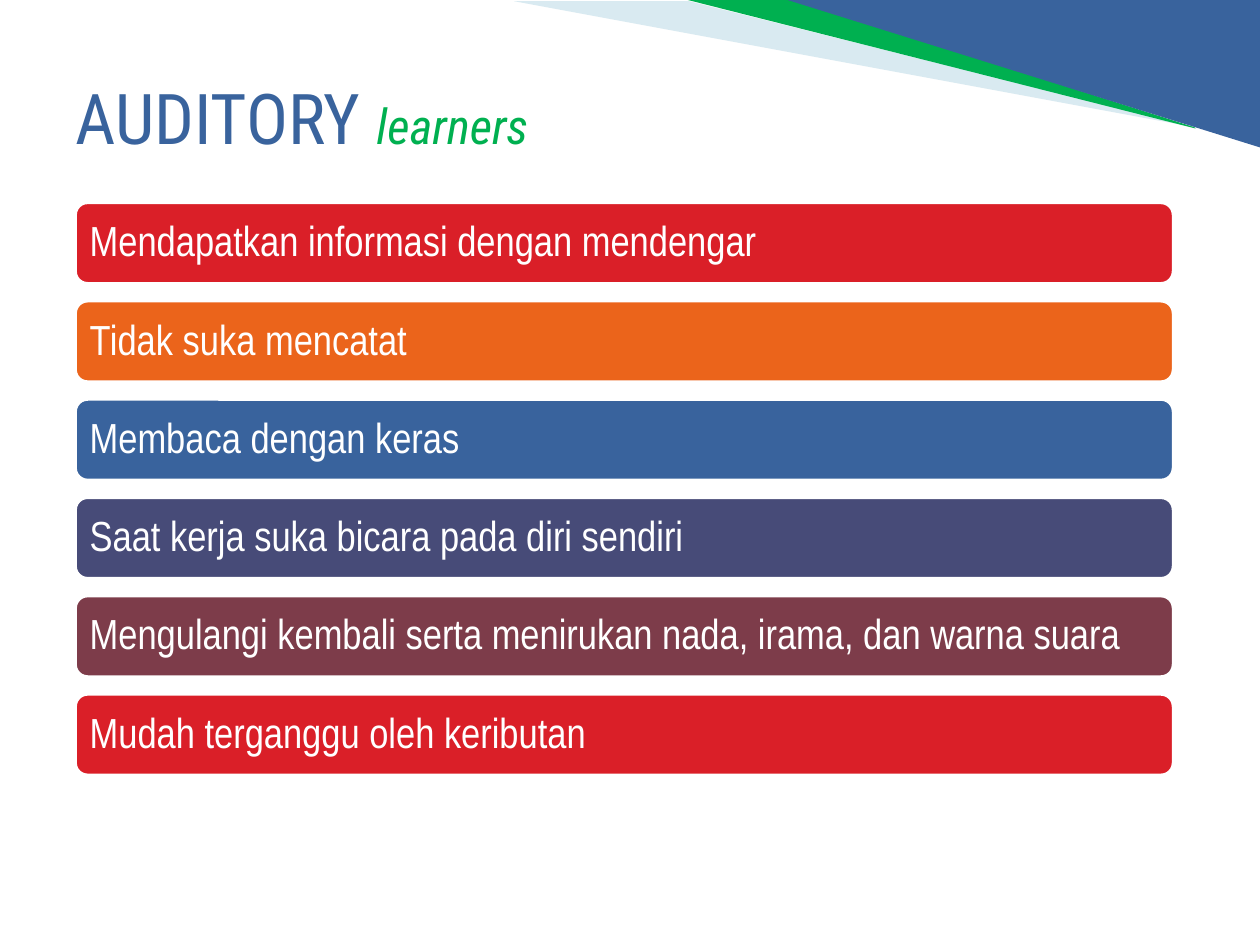
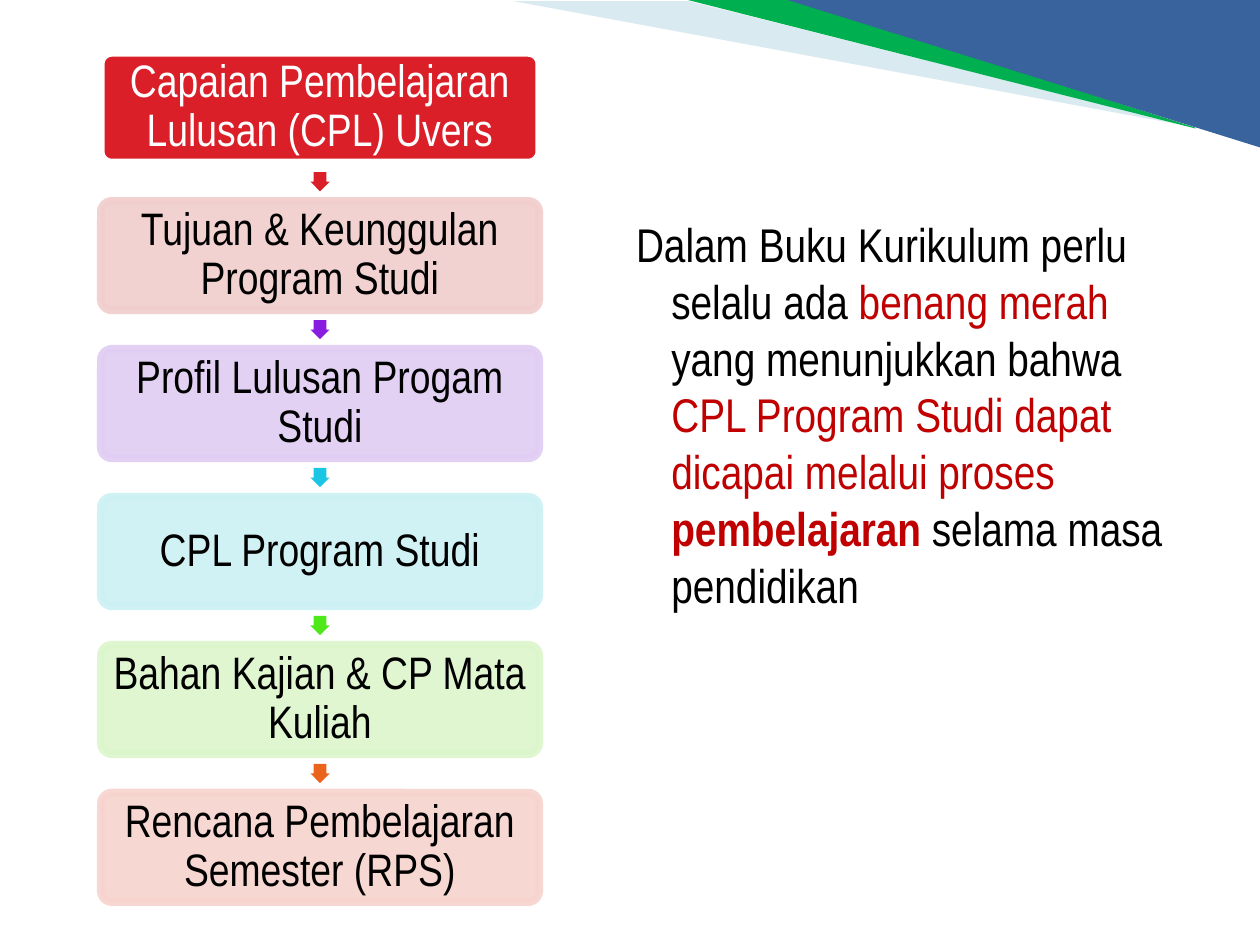
from collections import namedtuple

from lxml.etree import SubElement
from pptx import Presentation
from pptx.dml.color import RGBColor
from pptx.enum.shapes import MSO_SHAPE as Shape
from pptx.enum.text import MSO_ANCHOR as Anchor, PP_ALIGN as Align
from pptx.oxml.ns import qn
from pptx.util import Inches, Pt

SLIDE_W, SLIDE_H = Inches(10), Inches(7.5)
COLUMNS, ROWS = 100, 75

WHITE = RGBColor(0xFF, 0xFF, 0xFF)
BLACK = RGBColor(0, 0, 0)
RED = RGBColor(0xDA, 0x1F, 0x28)
ORANGE = RGBColor(0xEB, 0x64, 0x1B)
BLUE = RGBColor(0x39, 0x63, 0x9D)
INDIGO = RGBColor(0x47, 0x4B, 0x78)
MAROON = RGBColor(0x7D, 0x3C, 0x4A)
GREEN = RGBColor(0x00, 0xB0, 0x50)
MIST = RGBColor(0xA0, 0xCB, 0xDC)
CRIMSON = RGBColor(0xC0, 0, 0)
VIOLET = RGBColor(0x88, 0x1D, 0xE0)
CYAN = RGBColor(0x1B, 0xC6, 0xE5)
LIME = RGBColor(0x4E, 0xE8, 0x1B)
PALE_RED = RGBColor(0xF1, 0xCD, 0xCD)
PALE_VIOLET = RGBColor(0xE1, 0xCD, 0xF3)
PALE_CYAN = RGBColor(0xCC, 0xF1, 0xF4)
PALE_LIME = RGBColor(0xDC, 0xF6, 0xCC)
PALE_ORANGE = RGBColor(0xF7, 0xD3, 0xCD)

TITLE_FONT = "Roboto Condensed"
BODY_FONT = "Arial Narrow"
OUTLINE = Pt(4.33)

Box = namedtuple("Box", "left top width height")


def cols(count):
    return round(SLIDE_W * count / COLUMNS)


def rows(count):
    return round(SLIDE_H * count / ROWS)


def grid(left, top, width, height):
    return Box(cols(left), rows(top), cols(width), rows(height))


def stack(box, count, gap_ratio):
    height = box.height / (count + (count - 1) * gap_ratio)
    pitch = height * (1 + gap_ratio)
    return [Box(box.left, round(box.top + i * pitch), box.width, round(height))
            for i in range(count)]


def paint(shape, fill, line=None, opacity=100):
    shape.shadow.inherit = False
    shape.fill.solid()
    shape.fill.fore_color.rgb = fill
    if line is None:
        shape.line.fill.background()
    else:
        shape.line.color.rgb = line
        shape.line.width = OUTLINE
    if opacity < 100:
        for color in shape._element.spPr.iter(qn("a:srgbClr")):
            SubElement(color, qn("a:alpha")).set("val", str(opacity * 1000))


def add_run(paragraph, text, size, color, font=BODY_FONT, bold=False, italic=False):
    run = paragraph.add_run()
    run.text = text
    run.font.name = font
    run.font.size = Pt(size)
    run.font.color.rgb = color
    run.font.bold = bold
    run.font.italic = italic


def add_text_box(slide, box, anchor):
    frame = slide.shapes.add_textbox(*box).text_frame
    frame.word_wrap = True
    frame.vertical_anchor = anchor
    return frame.paragraphs[0]


def add_card(slide, box, text, size, fill, line, ink, align, margin,
             corner=0.17, opacity=100):
    card = slide.shapes.add_shape(Shape.ROUNDED_RECTANGLE, *box)
    card.adjustments[0] = corner
    paint(card, fill, line, opacity)
    frame = card.text_frame
    frame.word_wrap = True
    frame.vertical_anchor = Anchor.MIDDLE
    frame.margin_left = frame.margin_right = margin
    frame.margin_top = frame.margin_bottom = margin
    paragraph = frame.paragraphs[0]
    paragraph.alignment = align
    paragraph.line_spacing = 0.9
    add_run(paragraph, text, size, ink)


def add_corner(slide, box):
    rays = [
        (MIST, 40, [(0, 0.1), (13.9, 0.1), (54, 10.1)]),
        (GREEN, 100, [(13.8, 0), (22.3, 0), (54, 10.1), (54.1, 10.2)]),
    ]
    for color, opacity, points in rays:
        corners = [(box.left + cols(x), box.top + rows(y)) for x, y in points]
        outline = slide.shapes.build_freeform(*corners[0])
        outline.add_line_segments(corners[1:], close=True)
        paint(outline.convert_to_shape(), color, opacity=opacity)
    width = cols(37.5)
    wedge = slide.shapes.add_shape(
        Shape.RIGHT_TRIANGLE, box.left + box.width - width, box.top, width, box.height)
    wedge.rotation = 180
    paint(wedge, BLUE)


def add_title(slide, box, lead, tail):
    paragraph = add_text_box(slide, box, Anchor.MIDDLE)
    add_run(paragraph, lead, 40, BLUE, TITLE_FONT)
    add_run(paragraph, tail, 28, GREEN, TITLE_FONT, italic=True)


def add_traits(slide, box, traits):
    for bar, (text, color) in zip(stack(box, len(traits), 0.15), traits):
        add_card(slide, bar, text, 24, color, WHITE, WHITE, Align.LEFT, cols(1))


def add_curriculum_flow(slide, box, steps, arrow_colors):
    cards = stack(box, len(steps), 0.35)
    for i, (card, (text, color)) in enumerate(zip(cards, steps)):
        first = i == 0
        add_card(slide, card, text, 26, color,
                 WHITE if first else color, WHITE if first else BLACK,
                 Align.CENTER, cols(0.4), corner=0.1, opacity=100 if first else 90)
    for above, below, color in zip(cards, cards[1:], arrow_colors):
        bottom = above.top + above.height
        gap = below.top - bottom
        side = gap // 2
        arrow = slide.shapes.add_shape(
            Shape.DOWN_ARROW, above.left + (above.width - side) // 2,
            bottom + (gap - side) // 2, side, side)
        arrow.adjustments[0] = 0.67
        paint(arrow, color)


def add_explanation(slide, box, phrases):
    paragraph = add_text_box(slide, box, Anchor.TOP)
    properties = paragraph._p.get_or_add_pPr()
    properties.set("marL", str(cols(4)))
    properties.set("indent", str(-cols(2.8)))
    for text, color, bold in phrases:
        add_run(paragraph, text, 27, color, bold=bold)


def new_slide(deck):
    slide = deck.slides.add_slide(deck.slide_layouts[6])
    add_corner(slide, grid(40.8, 0, 59.2, 11.7))
    return slide


def build_auditory(deck):
    slide = new_slide(deck)
    add_title(slide, grid(5, 3, 90, 12.5), "AUDITORY ", "learners")
    add_traits(slide, grid(5.8, 15.9, 87.5, 45.8), [
        ("Mendapatkan informasi dengan mendengar", RED),
        ("Tidak suka mencatat", ORANGE),
        ("Membaca dengan keras", BLUE),
        ("Saat kerja suka bicara pada diri sendiri", INDIGO),
        ("Mengulangi kembali serta menirukan nada, irama, dan warna suara", MAROON),
        ("Mudah terganggu oleh keributan", RED),
    ])


def build_curriculum(deck):
    slide = new_slide(deck)
    add_curriculum_flow(slide, grid(8, 4.2, 34.8, 67.4), [
        ("Capaian Pembelajaran Lulusan (CPL) Uvers", RED),
        ("Tujuan & Keunggulan Program Studi", PALE_RED),
        ("Profil Lulusan Progam Studi", PALE_VIOLET),
        ("CPL Program Studi", PALE_CYAN),
        ("Bahan Kajian & CP Mata Kuliah", PALE_LIME),
        ("Rencana Pembelajaran Semester (RPS)", PALE_ORANGE),
    ], [RED, VIOLET, CYAN, LIME, ORANGE])
    add_explanation(slide, grid(48.3, 16.6, 46.7, 49.1), [
        ("Dalam Buku Kurikulum perlu selalu ada ", BLACK, False),
        ("benang merah ", CRIMSON, False),
        ("yang menunjukkan bahwa ", BLACK, False),
        ("CPL Program Studi dapat dicapai melalui proses ", CRIMSON, False),
        ("pembelajaran ", CRIMSON, True),
        ("selama masa pendidikan", BLACK, False),
    ])


def main():
    deck = Presentation()
    deck.slide_width, deck.slide_height = SLIDE_W, SLIDE_H
    build_auditory(deck)
    build_curriculum(deck)
    deck.save("out.pptx")


if __name__ == "__main__":
    main()
